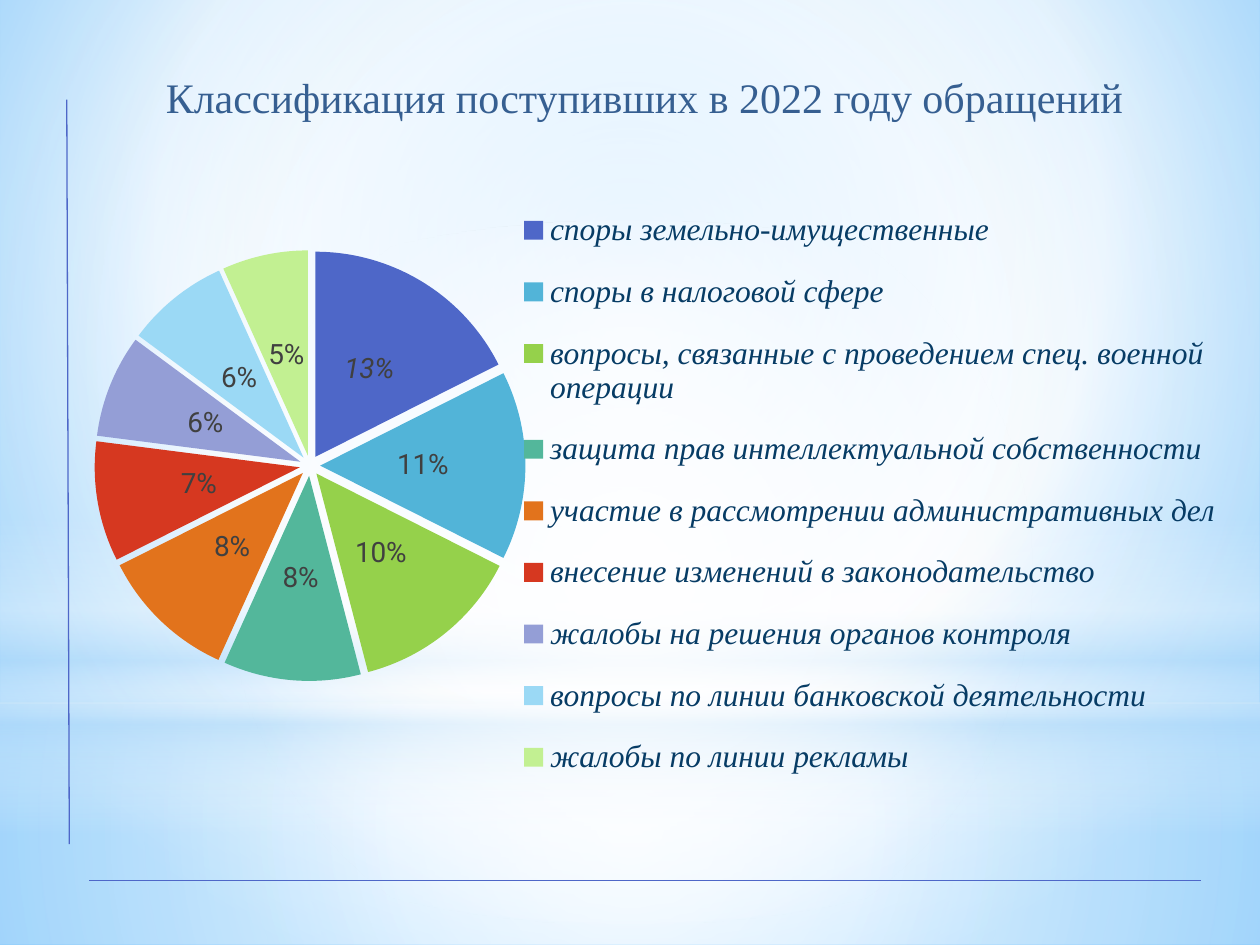
from lxml import etree
from pptx import Presentation
from pptx.chart.data import CategoryChartData
from pptx.dml.color import RGBColor
from pptx.enum.chart import XL_CHART_TYPE, XL_LABEL_POSITION, XL_LEGEND_POSITION
from pptx.enum.shapes import MSO_CONNECTOR, MSO_SHAPE
from pptx.enum.text import MSO_ANCHOR, PP_ALIGN
from pptx.oxml import parse_xml
from pptx.oxml.ns import nsdecls, qn
from pptx.util import Inches, Pt

PIE = XL_CHART_TYPE.PIE
CENTER_LABEL = XL_LABEL_POSITION.CENTER
RIGHT = XL_LEGEND_POSITION.RIGHT
STRAIGHT = MSO_CONNECTOR.STRAIGHT
RECTANGLE, OVAL = MSO_SHAPE.RECTANGLE, MSO_SHAPE.OVAL

WIDTH, HEIGHT = 10, 7.5
SERIF, SANS = "Times New Roman", "Roboto"
COLORS = {
    "title": "365F91", "rule": "4E67C8", "legend": "073C65", "label": "404040",
    "white": "FFFFFF", "haze": "B4DCFA", "sky": "9ED5FF", "deep_sky": "5BB9FF",
}
APPEALS = [
    ("споры земельно-имущественные ", 0.13, "4E67C8"),
    ("споры в налоговой сфере ", 0.11, "52B4D8"),
    ("вопросы, связанные с проведением спец. военной операции", 0.10, "95D14B"),
    ("защита прав интеллектуальной собственности", 0.08, "53B79B"),
    ("участие в рассмотрении административных дел", 0.08, "E2731C"),
    ("внесение изменений в законодательство", 0.07, "D63820"),
    ("жалобы на решения органов контроля", 0.06, "949ED6"),
    ("вопросы по линии банковской деятельности", 0.06, "9BD9F5"),
    ("жалобы по линии рекламы", 0.05, "C2F092"),
]


def color(name):
    return RGBColor.from_string(COLORS[name])


def set_font(font, name, size, color_name, italic=False):
    font.name, font.size, font.italic, font.bold = name, Pt(size), italic, False
    font.color.rgb = color(color_name)


def write_text(frame, text, align=PP_ALIGN.LEFT, **font_format):
    paragraph = frame.paragraphs[0]
    paragraph.alignment = align
    run = paragraph.add_run()
    run.text = text
    set_font(run.font, **font_format)


def apply_gradient(fill_owner, stops, focus=None, angle=90):
    """Replace a solid fill with stops of (position, colour, opacity) in percent.

    A focus of (left, top, right, bottom) percent makes the gradient circular.
    """
    stop_xml = "".join(
        f'<a:gs pos="{position * 1000}"><a:srgbClr val="{COLORS[name]}">'
        f'<a:alpha val="{opacity * 1000}"/></a:srgbClr></a:gs>'
        for position, name, opacity in stops)
    if focus:
        left, top, right, bottom = (side * 1000 for side in focus)
        direction = (f'<a:path path="circle"><a:fillToRect l="{left}" t="{top}" '
                     f'r="{right}" b="{bottom}"/></a:path>')
    else:
        direction = f'<a:lin ang="{angle * 60000}" scaled="0"/>'
    gradient = parse_xml(f'<a:gradFill {nsdecls("a")} rotWithShape="1">'
                         f'<a:gsLst>{stop_xml}</a:gsLst>{direction}</a:gradFill>')
    fill_owner.replace(fill_owner.find(qn("a:solidFill")), gradient)


def add_backdrop(slide):
    slide.background.fill.solid()
    apply_gradient(slide._element.xpath(".//p:bgPr")[0],
                   [(0, "sky", 100), (60, "white", 100), (100, "deep_sky", 100)],
                   (20, 10, 20, 60))
    center = (50, 50, 50, 50)
    horizon = 5.58
    layers = [
        (RECTANGLE, horizon, HEIGHT - horizon, center,
         [(0, "white", 91), (37, "white", 76), (100, "haze", 79)]),
        (RECTANGLE, 0, horizon, center,
         [(0, "white", 89), (48, "white", 62), (100, "haze", 79)]),
        (RECTANGLE, 4.12, 2.5, None,
         [(0, "white", 0), (29, "white", 30), (45, "haze", 40),
          (55, "white", 26), (65, "haze", 60), (100, "white", 0)]),
        (OVAL, 1.75, horizon, center, [(0, "white", 100), (56, "white", 0)]),
    ]
    for preset, top, height, focus, stops in layers:
        shape = slide.shapes.add_shape(
            preset, 0, Inches(top), Inches(WIDTH), Inches(height))
        shape.shadow.inherit = False
        shape.line.fill.background()
        shape.fill.solid()
        apply_gradient(shape._element.spPr, stops, focus)


def add_title(slide, left, top, width, height):
    title = slide.shapes.title
    title.left, title.top = Inches(left), Inches(top)
    title.width, title.height = Inches(width), Inches(height)
    title.text_frame.vertical_anchor = MSO_ANCHOR.MIDDLE
    write_text(title.text_frame, "Классификация поступивших в 2022 году обращений",
               align=PP_ALIGN.CENTER, name=SERIF, size=24, color_name="title")
    slide.shapes._spTree.append(title._element)  # bring above the backdrop


def add_rule(slide, *ends):
    line = slide.shapes.add_connector(STRAIGHT, *(Inches(end) for end in ends))
    line.line.color.rgb = color("rule")
    line.line.width = Pt(0.75)
    etree.SubElement(line._element.spPr, qn("a:effectLst"))


def manual_layout(x, y, width, height, inner=False):
    """Return a layout given as shares of the chart's size."""
    target = '<c:layoutTarget val="inner"/>' if inner else ""
    return parse_xml(
        f'<c:layout {nsdecls("c")}><c:manualLayout>{target}'
        f'<c:xMode val="edge"/><c:yMode val="edge"/><c:x val="{x}"/><c:y val="{y}"/>'
        f'<c:w val="{width}"/><c:h val="{height}"/></c:manualLayout></c:layout>')


def place_part(part, layout, before):
    for old in part.findall(qn("c:layout")):
        part.remove(old)
    part.find(qn(before)).addprevious(layout)


def add_appeals_pie(slide, left, top, width, height):
    data = CategoryChartData(number_format="0%")
    data.categories = [name for name, _, _ in APPEALS]
    data.add_series("Series 1", [share for _, share, _ in APPEALS])
    chart = slide.shapes.add_chart(
        PIE, Inches(left), Inches(top), Inches(width), Inches(height), data).chart
    chart.has_title = False
    set_font(chart.font, SANS, 18, "label")

    plot = chart.plots[0]
    plot.vary_by_categories = True
    series = plot.series[0]
    for index, (_, _, fill) in enumerate(APPEALS):
        slice_fill = series.points[index].format.fill
        slice_fill.solid()
        slice_fill.fore_color.rgb = RGBColor.from_string(fill)
    series._element.find(qn("c:dPt")).addprevious(
        parse_xml(f'<c:explosion {nsdecls("c")} val="5"/>'))

    labels = series.data_labels
    labels.show_value = True
    labels.show_percentage = False
    labels.number_format = "0%"
    labels.number_format_is_linked = False
    labels.position = CENTER_LABEL
    set_font(labels.font, SANS, 16, "label")
    first_label = series.points[0].data_label
    set_font(first_label.font, SANS, 16, "label", italic=True)
    first_label.position = CENTER_LABEL

    chart.has_legend = True
    legend = chart.legend
    legend.position = RIGHT
    legend.include_in_layout = False
    set_font(legend.font, SERIF, 18, "legend", italic=True)
    place_part(legend._element, manual_layout(0.41, 0.08, 0.58, 0.88), "c:overlay")
    place_part(chart._chartSpace.chart.plotArea,
               manual_layout(0.065, 0.172, 0.353, 0.615, inner=True), "c:pieChart")


def main():
    presentation = Presentation()
    presentation.slide_width, presentation.slide_height = Inches(WIDTH), Inches(HEIGHT)
    slide = presentation.slides.add_slide(presentation.slide_layouts[5])
    add_backdrop(slide)
    add_title(slide, 0.33, 0.52, 9.57, 0.5)
    add_rule(slide, 0.71, 6.99, 9.53, 6.99)
    add_appeals_pie(slide, 0.12, 1.03, 9.69, 5.56)
    add_rule(slide, 0.53, 0.79, 0.55, 6.7)
    presentation.save("out.pptx")


if __name__ == "__main__":
    main()
